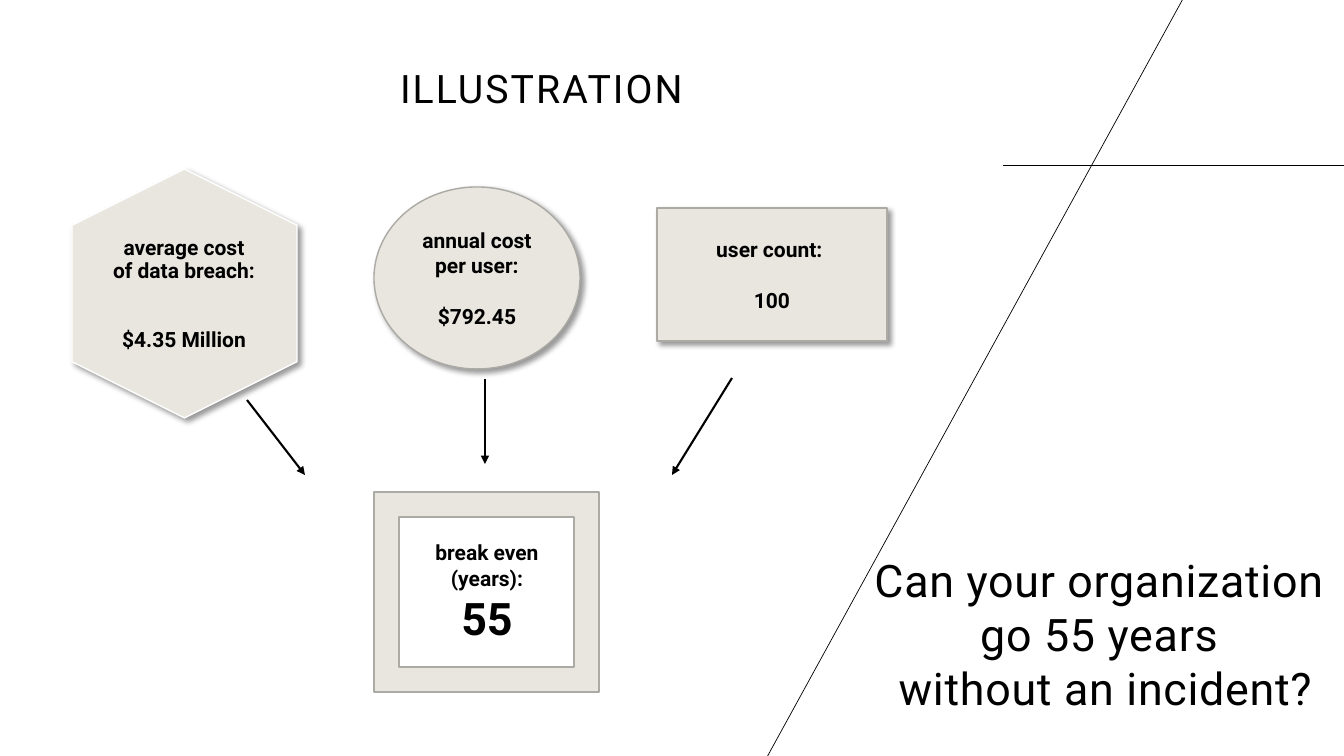
from lxml.etree import SubElement
from pptx import Presentation
from pptx.dml.color import RGBColor
from pptx.enum.shapes import MSO_CONNECTOR as CONNECTOR, MSO_SHAPE as SHAPE
from pptx.enum.text import MSO_ANCHOR as ANCHOR, MSO_AUTO_SIZE as AUTO_SIZE, PP_ALIGN as ALIGN
from pptx.oxml.ns import qn
from pptx.util import Pt

BLACK = RGBColor(0x00, 0x00, 0x00)
WHITE = RGBColor(0xFF, 0xFF, 0xFF)
SAND = RGBColor(0xE9, 0xE6, 0xDF)
GREY = RGBColor(0xAC, 0xAA, 0xA5)
FONT = "Roboto"
PX = 914400 / 100.8

HEADING = "ILLUSTRATION"
QUESTION = "Can your organization \vgo 55 years \vwithout an incident?"
BREACH = [("average cost\vof data breach:", 15, 0), ("$4.35 Million", 15, 33)]
ANNUAL = [("annual cost\vper user:", 15, 0), ("$792.45", 15, 18)]
USERS = [("user count: ", 15, 0), ("100", 15, 18)]
BREAK_EVEN = [("break even\v(years):", 15, 0), ("55", 32, 0)]

HEADING_BOX = (260, 11, 563, 106)
QUESTION_BOX = (824, 548, 563, 168)
BREACH_BOX = (60, 181, 249, 225)
BREACH_TEXT_BOX = (107, 209, 154, 171)
FACTORS = [
    (SHAPE.OVAL, (374, 187, 206, 182), ANNUAL),
    (SHAPE.RECTANGLE, (657, 208, 230, 133), USERS),
]
FRAME_BOX = (374, 492, 225, 200)
BREAK_EVEN_TEXT_BOX = (403, 535, 168, 115)
BACKDROP_LINES = [(1003, 165, 1344, 165), (1184, -3, 766, 759)]
ARROWS = [(247, 400, 305, 475), (485, 379, 485, 464), (732, 378, 672, 475)]


def emu(lengths):
    return [round(length * PX) for length in lengths]


def write(holder, paragraphs, bold=True, tracking=0, leading=1.0, anchor=ANCHOR.MIDDLE):
    frame = holder.text_frame
    frame.word_wrap = True
    frame.auto_size = AUTO_SIZE.NONE
    frame.vertical_anchor = anchor
    for index, (words, size, gap) in enumerate(paragraphs):
        paragraph = frame.add_paragraph() if index else frame.paragraphs[0]
        paragraph.text = words
        paragraph.alignment = ALIGN.CENTER
        paragraph.line_spacing = leading
        paragraph.space_before = Pt(gap)
        for run in paragraph.runs:
            run.font.name = FONT
            run.font.size = Pt(size)
            run.font.bold = bold
            run.font.color.rgb = BLACK
            if tracking:
                run.font._element.set("spc", str(tracking))


def place(placeholder, box):
    placeholder.left, placeholder.top, placeholder.width, placeholder.height = emu(box)


def add_figure(kind, box, outline=GREY, shadow=True):
    figure = slide.shapes.add_shape(kind, *emu(box))
    figure.fill.solid()
    figure.fill.fore_color.rgb = SAND
    figure.line.color.rgb = outline
    figure.line.width = Pt(1)
    figure.shadow.inherit = False
    if shadow:
        effects = figure._element.spPr.find(qn("a:effectLst"))
        outer = SubElement(effects, qn("a:outerShdw"), blurRad=str(Pt(4)), dist=str(Pt(3)),
                           dir="2700000", algn="tl", rotWithShape="0")
        tint = SubElement(outer, qn("a:srgbClr"), val=str(BLACK))
        SubElement(tint, qn("a:alpha"), val="40000")
    return figure


def add_line(ends, width, arrow=False):
    line = slide.shapes.add_connector(CONNECTOR.STRAIGHT, *emu(ends))
    line.line.color.rgb = BLACK
    line.line.width = Pt(width)
    if arrow:
        SubElement(line.line._get_or_add_ln(), qn("a:tailEnd"), type="triangle")
    SubElement(line._element.spPr, qn("a:effectLst"))


def add_label(box, paragraphs, leading=1.0, anchor=ANCHOR.MIDDLE):
    label = slide.shapes.add_textbox(*emu(box))
    write(label, paragraphs, leading=leading, anchor=anchor)
    return label


deck = Presentation()
deck.slide_width, deck.slide_height = emu((1344, 756))
slide = deck.slides.add_slide(deck.slide_layouts[1])

for ends in BACKDROP_LINES:
    add_line(ends, 0.5)

heading = slide.shapes.title
place(heading, HEADING_BOX)
write(heading, [(HEADING, 28, 0)], bold=False, tracking=150, leading=0.9, anchor=ANCHOR.BOTTOM)

question = slide.placeholders[1]
place(question, QUESTION_BOX)
write(question, [(QUESTION, 32, 0)], bold=False, tracking=50, anchor=ANCHOR.TOP)
question_format = question.text_frame.paragraphs[0]._p.get_or_add_pPr()
question_format.set("marL", "0")
question_format.set("indent", "0")
SubElement(question_format, qn("a:buNone"))

breach = add_figure(SHAPE.HEXAGON, BREACH_BOX, outline=WHITE)
breach.rotation = 90
breach.adjustments[0] = 0.25
breach_label = add_label(BREACH_TEXT_BOX, BREACH, leading=0.9)
breach_label.text_frame.margin_left = breach_label.text_frame.margin_right = 0

for kind, box, paragraphs in FACTORS:
    write(add_figure(kind, box), paragraphs)

for ends in ARROWS:
    add_line(ends, 1.5, arrow=True)

add_figure(SHAPE.FRAME, FRAME_BOX, shadow=False)
add_label(BREAK_EVEN_TEXT_BOX, BREAK_EVEN, anchor=ANCHOR.TOP)

deck.save("out.pptx")
